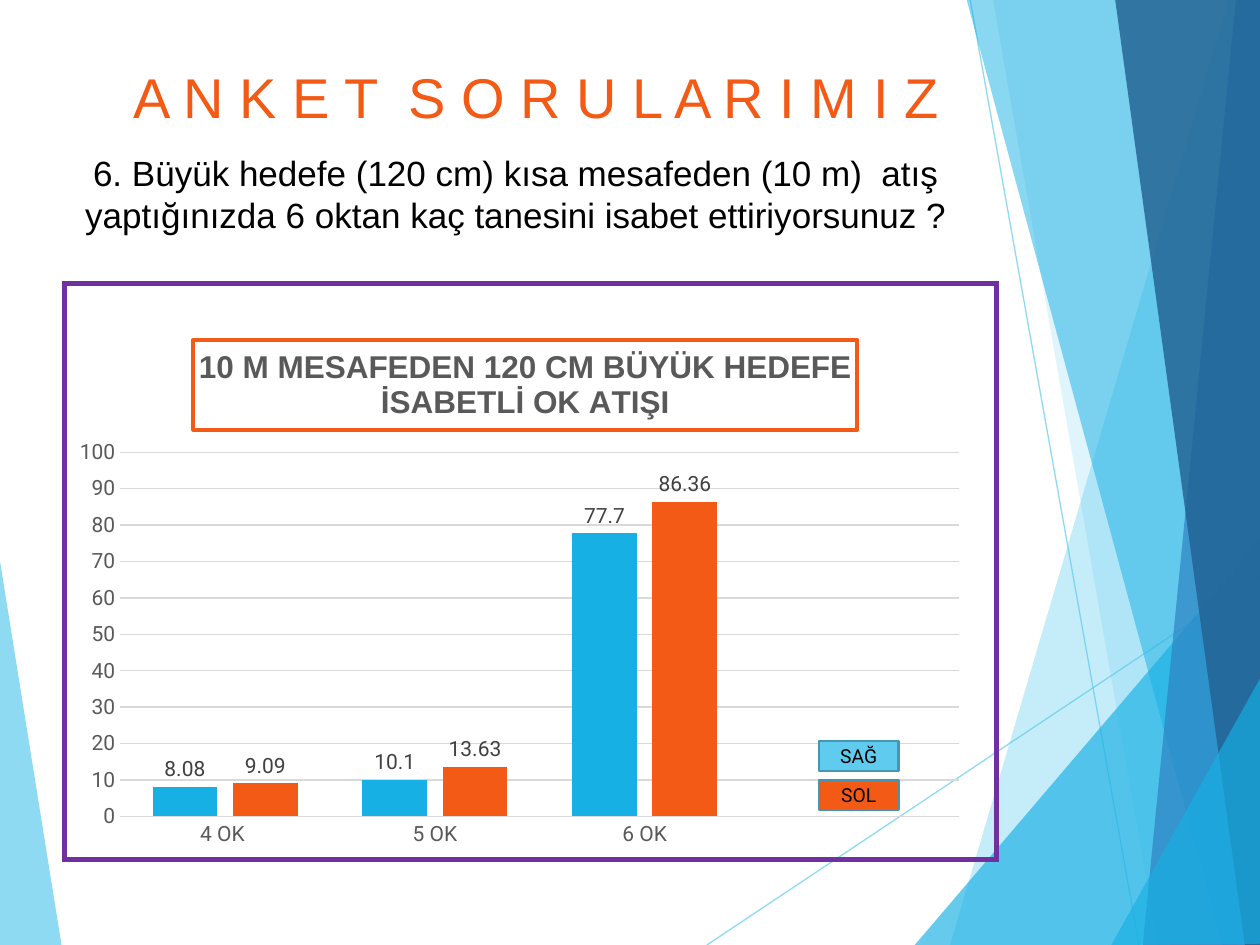
from dataclasses import dataclass

from lxml.etree import SubElement
from pptx import Presentation
from pptx.chart.data import CategoryChartData
from pptx.dml.color import RGBColor
from pptx.enum.chart import XL_CHART_TYPE as ChartType, XL_LABEL_POSITION as LabelPos
from pptx.enum.chart import XL_TICK_MARK as Tick
from pptx.enum.shapes import MSO_CONNECTOR as Connector, MSO_SHAPE as Shape
from pptx.enum.text import MSO_ANCHOR as Anchor, MSO_AUTO_SIZE as AutoSize, PP_ALIGN as Align
from pptx.oxml import parse_xml
from pptx.oxml.ns import nsdecls, qn
from pptx.util import Inches, Pt


@dataclass(frozen=True)
class Theme:
    sky: str = "5FCBEF"
    cyan: str = "17B0E4"
    blue: str = "2E83C3"
    navy: str = "226292"
    orange: str = "F35A15"
    purple: str = "7030A0"
    key_line: str = "4696B1"
    ink: str = "000000"
    label: str = "404040"
    axis: str = "595959"
    grid: str = "D9D9D9"
    heading: str = "Arial"
    body: str = "Roboto"
    title_size: int = 32
    question_size: int = 20
    chart_title_size: int = 18
    chart_size: int = 12
    key_size: int = 11


T = Theme()

FACETS = [
    (T.sky, 70, [(-0.01, 4.39), (0.49, 7.51), (-0.01, 7.5)]),
    (T.sky, 36, [(9.75, 0), (7.54, 7.5), (10.02, 7.51), (10.01, 0.01)]),
    (T.sky, 20, [(7.88, -0.01), (9.19, 7.5), (10.01, 7.5), (10.01, -0.01)]),
    (T.cyan, 66, [(7.26, 7.5), (10, 4.29), (10.01, 7.5)]),
    (T.cyan, 50, [(7.67, -0.01), (9.7, 7.5), (10.01, 7.49), (10.01, -0.01)]),
    (T.blue, 70, [(9.81, -0.01), (9.07, 7.5), (10.01, 7.5), (10, -0.01)]),
    (T.navy, 82, [(8.85, -0.01), (9.88, 7.5), (10.02, 7.5), (10, -0.01)]),
    (T.cyan, 66, [(8.82, 7.5), (10.02, 5.35), (10.02, 7.49)]),
]
RAYS = [(5.61, 7.5, 10.01, 4.57), (7.7, 0, 9.04, 7.5)]


def rgb(value):
    return RGBColor.from_string(value)


def inches(values):
    return [Inches(v) for v in values]


def set_alpha(parent, percent):
    color = next(parent.iter(qn("a:srgbClr")))
    SubElement(color, qn("a:alpha"), val=str(percent * 1000))


def fill_solid(obj, color):
    obj.fill.solid()
    obj.fill.fore_color.rgb = rgb(color)


def set_line(line, color, width):
    line.color.rgb = rgb(color)
    line.width = Pt(width)


def set_font(font, name, size, color, bold=False):
    font.name, font.size, font.bold = name, Pt(size), bold
    font.color.rgb = rgb(color)


def write(sp, text, name, size, color, anchor=Anchor.TOP):
    tf = sp.text_frame
    tf.text = text
    tf.word_wrap = True
    tf.vertical_anchor = anchor
    p = tf.paragraphs[0]
    p.alignment = Align.CENTER
    set_font(p.runs[0].font, name, size, color)
    return tf


def add_facet(s, color, alpha, points):
    start, *rest = [tuple(inches(point)) for point in points]
    builder = s.shapes.build_freeform(*start)
    builder.add_line_segments(rest, close=True)
    sp = builder.convert_to_shape()
    sp.shadow.inherit = False
    fill_solid(sp, color)
    set_alpha(sp.fill._xPr, alpha)
    sp.line.fill.background()


def add_ray(s, ends):
    line = s.shapes.add_connector(Connector.STRAIGHT, *inches(ends))
    set_line(line.line, T.sky, 0.75)
    sp_pr = line._element.spPr
    set_alpha(sp_pr, 70)
    SubElement(sp_pr, qn("a:effectLst"))


def add_backdrop(s):
    add_facet(s, *FACETS[0])
    for ends in RAYS:
        add_ray(s, ends)
    for facet in FACETS[1:]:
        add_facet(s, *facet)


def add_title(s, box):
    title = s.shapes.title
    title.left, title.top, title.width, title.height = inches(box)
    tf = write(title, "A N K E T  S O R U L A R I M I Z",
               T.heading, T.title_size, T.orange, Anchor.MIDDLE)
    tf.auto_size = AutoSize.NONE


def add_question(s, box):
    sp = s.shapes.add_textbox(*inches(box))
    tf = write(sp, "6. Büyük hedefe (120 cm) kısa mesafeden (10 m)  atış yaptığınızda "
               "6 oktan kaç tanesini isabet ettiriyorsunuz ?",
               T.heading, T.question_size, T.ink)
    tf.auto_size = AutoSize.SHAPE_TO_FIT_TEXT


def manual_layout(inner=False, **fractions):
    target = '<c:layoutTarget val="inner"/>' if inner else ""
    modes = "".join(f'<c:{k}Mode val="edge"/>' for k in "xy")
    values = "".join(f'<c:{k} val="{v}"/>' for k, v in fractions.items())
    return parse_xml(f'<c:layout {nsdecls("c")}><c:manualLayout>{target}{modes}{values}'
                     "</c:manualLayout></c:layout>")


def replace_layout(parent, layout, index):
    for old in parent.findall(qn("c:layout")):
        parent.remove(old)
    parent.insert(index, layout)


def style_chart_title(chart):
    title = chart.chart_title
    title.text_frame.text = "10 M MESAFEDEN 120 CM BÜYÜK HEDEFE İSABETLİ OK ATIŞI"
    run = title.text_frame.paragraphs[0].runs[0]
    set_font(run.font, T.heading, T.chart_title_size, T.axis, bold=True)
    set_line(title.format.line, T.orange, 2.25)
    replace_layout(title._element, manual_layout(x=0.14, y=0.03), 1)


def style_axes(chart):
    for axis in (chart.category_axis, chart.value_axis):
        axis.major_tick_mark = axis.minor_tick_mark = Tick.NONE
        set_font(axis.tick_labels.font, T.body, T.chart_size, T.axis)
    set_line(chart.category_axis.format.line, T.grid, 1)
    values = chart.value_axis
    values.minimum_scale, values.maximum_scale, values.major_unit = 0, 100, 10
    values.format.line.fill.background()
    set_line(values.major_gridlines.format.line, T.grid, 0.75)


def add_hits_chart(s, box):
    data = CategoryChartData()
    data.categories = ["4 OK ", "5 OK", "6 OK", ""]
    data.add_series("Series 1", (8.08, 10.1, 77.7, None))
    data.add_series("Series 2", (9.09, 13.63, 86.36, None))
    chart = s.shapes.add_chart(ChartType.COLUMN_CLUSTERED, *inches(box), data).chart
    set_font(chart.font, T.body, 10, T.ink)
    chart.has_legend = False
    style_chart_title(chart)
    style_axes(chart)
    plot = chart.plots[0]
    plot.gap_width, plot.overlap, plot.vary_by_categories = 100, -24, False
    for series, color in zip(plot.series, (T.cyan, T.orange)):
        fill_solid(series.format, color)
        labels = series.data_labels
        labels.show_value, labels.position = True, LabelPos.OUTSIDE_END
        set_font(labels.font, T.body, T.chart_size, T.label)
    plot_area = chart._chartSpace.chart.plotArea
    replace_layout(plot_area, manual_layout(inner=True, x=0.06, y=0.24, w=0.92, h=0.68), 0)


def add_frame(s, box):
    table = s.shapes.add_table(1, 1, *inches(box)).table
    table.first_row = table.horz_banding = False
    cell = table.cell(0, 0)
    cell.fill.background()
    tc_pr = cell._tc.get_or_add_tcPr()
    for i, side in enumerate(("lnL", "lnR", "lnT", "lnB")):
        tc_pr.insert(i, parse_xml(
            f'<a:{side} {nsdecls("a")} w="{Pt(3)}"><a:solidFill>'
            f'<a:srgbClr val="{T.purple}"/></a:solidFill></a:{side}>'))


def add_key(s, box):
    left, top, width, height = box
    for i, (text, color) in enumerate((("SAĞ", T.sky), ("SOL", T.orange))):
        sp = s.shapes.add_shape(Shape.RECTANGLE, *inches((left, top + i * 0.31, width, height)))
        sp.shadow.inherit = False
        fill_solid(sp, color)
        set_line(sp.line, T.key_line, 1.5)
        tf = write(sp, text, T.body, T.key_size, T.ink, Anchor.MIDDLE)
        tf.margin_left = tf.margin_right = tf.margin_top = tf.margin_bottom = 0


def main():
    prs = Presentation()
    prs.slide_width, prs.slide_height = Inches(10), Inches(7.5)
    s = prs.slides.add_slide(prs.slide_layouts[5])
    add_backdrop(s)
    add_hits_chart(s, (0.52, 2.57, 7.24, 4.25))
    add_title(s, (0.75, 0.41, 7.02, 0.71))
    add_question(s, (0, 1.15, 8.19, 0.77))
    add_frame(s, (0.51, 2.25, 7.4, 4.57))
    add_key(s, (6.5, 5.88, 0.63, 0.24))
    prs.save("out.pptx")


if __name__ == "__main__":
    main()
